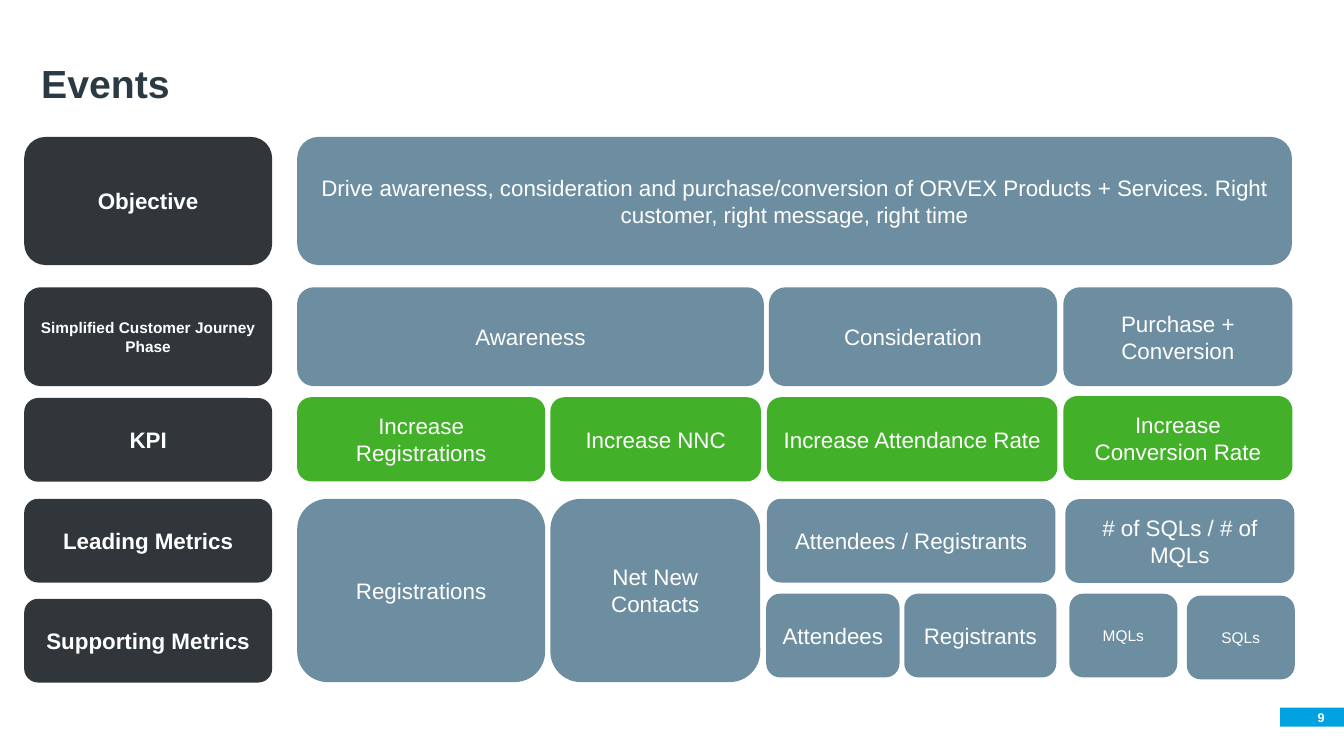
import pptx
import pptx.util
import pptx.dml.color
import pptx.enum.shapes
import pptx.enum.text

Cm = pptx.util.Cm
SHAPE = pptx.enum.shapes.MSO_SHAPE
ALIGN = pptx.enum.text.PP_ALIGN
ANCHOR = pptx.enum.text.MSO_ANCHOR
HUES = {"dark": "303639", "steel": "6D8EA0", "green": "43B02A",
        "sky": "00A3E0", "ink": "2B3A42", "white": "FFFFFF"}


def rgb(name):
    return pptx.dml.color.RGBColor.from_string(HUES[name])


def put(text, x, y, w, h, fill=None, form=SHAPE.ROUNDED_RECTANGLE, size=16,
        bold=False, hue="white", align=ALIGN.CENTER, anchor=ANCHOR.MIDDLE,
        inset=None, space=None):
    """Place text in a filled shape, or in a text box if there is no fill."""
    box = tuple(Cm(n) for n in (x, y, w, h))
    if fill:
        item = slide.shapes.add_shape(form, *box)
        item.shadow.inherit = False
        item.fill.solid()
        item.fill.fore_color.rgb = rgb(fill)
        item.line.fill.background()
    else:
        item = slide.shapes.add_textbox(*box)
    frame = item.text_frame
    frame.word_wrap = True
    frame.vertical_anchor = anchor
    if inset is not None:
        frame.margin_left = frame.margin_right = Cm(inset)
        frame.margin_top = frame.margin_bottom = Cm(inset)
    para = frame.paragraphs[0]
    para.alignment = align
    if space:
        para.line_spacing = space
    if text:
        run = para.add_run()
        run.text = text
        run.font.name = "Arial"
        run.font.size = pptx.util.Pt(size)
        run.font.bold = bold
        run.font.color.rgb = rgb(hue)


deck = pptx.Presentation()
deck.slide_width, deck.slide_height = Cm(33.87), Cm(19.05)
slide = deck.slides.add_slide(deck.slide_layouts[6])

put("", 32.26, 17.83, 1.61, 0.48, fill="sky", form=SHAPE.RECTANGLE)
put("9", 32.26, 17.83, 1.12, 0.48, size=9, bold=True, align=ALIGN.RIGHT, inset=0)
put("Events", 0.79, 0.69, 31.78, 2.13, size=28, bold=True, hue="ink",
    align=ALIGN.LEFT, anchor=ANCHOR.BOTTOM, space=0.9)

# Each row: label, label size, top, height
rows = [
    ("Objective", 16, 3.45, 3.23),
    ("Simplified Customer Journey Phase", 11, 7.24, 2.49),
    ("KPI", 16, 10.03, 2.11),
    ("Leading Metrics", 16, 12.57, 2.11),
    ("Supporting Metrics", 16, 15.09, 2.11),
]
for label, size, top, high in rows:
    put(label, 0.61, top, 6.25, high, fill="dark", size=size, bold=True)

# Each band: fill, height, then cards as text, left, top, width, size
bands = [
    ("steel", 3.23, [
        ("Drive awareness, consideration and purchase/conversion of ORVEX "
         "Products + Services. Right customer, right message, right time",
         7.49, 3.45, 25.07, 16)]),
    ("steel", 2.49, [
        ("Awareness", 7.49, 7.24, 11.76, 16),
        ("Consideration", 19.38, 7.24, 7.26, 16),
        ("Purchase + Conversion", 26.8, 7.24, 5.77, 16)]),
    ("green", 2.12, [
        ("Increase Registrations", 7.49, 10.01, 6.25, 16),
        ("Increase NNC", 13.87, 10.01, 5.31, 16),
        ("Increase Attendance Rate", 19.33, 10.01, 7.32, 16),
        ("Increase Conversion Rate", 26.8, 9.98, 5.77, 16)]),
    ("steel", 4.62, [
        ("Registrations", 7.49, 12.57, 6.25, 16),
        ("Net New Contacts", 13.87, 12.57, 5.29, 16)]),
    ("steel", 2.11, [
        ("Attendees / Registrants", 19.33, 12.57, 7.27, 16),
        ("# of SQLs / # of MQLs", 26.85, 12.58, 5.77, 16),
        ("Attendees", 19.31, 14.96, 3.36, 16),
        ("Registrants", 22.79, 14.96, 3.83, 16),
        ("MQLs", 26.95, 14.96, 2.72, 11),
        ("SQLs", 29.91, 15.01, 2.72, 11)]),
]
for fill, high, cards in bands:
    for text, left, top, wide, size in cards:
        put(text, left, top, wide, high, fill=fill, size=size)

deck.save("out.pptx")
